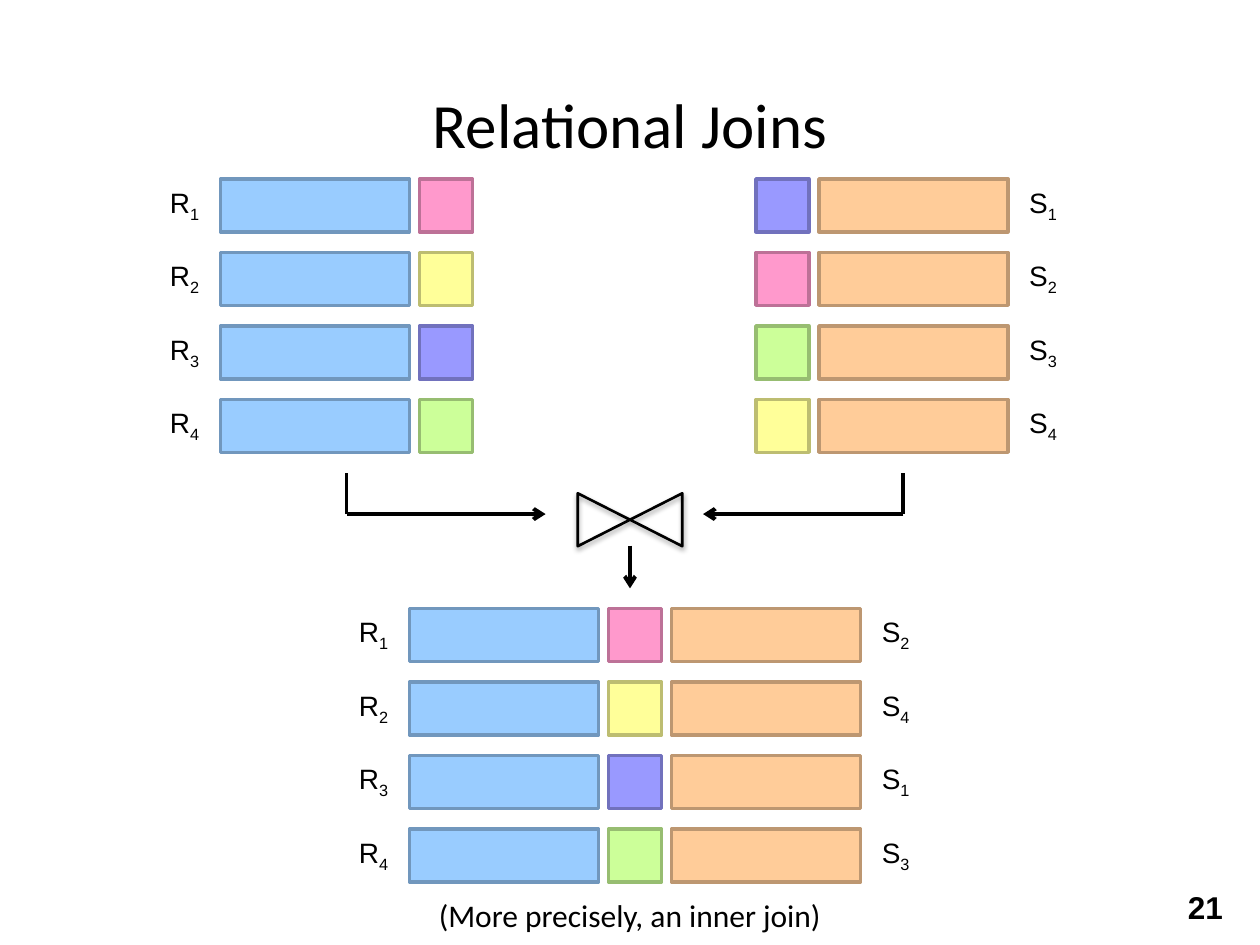
"""Build the relational joins slide: two relations, a join symbol and the joined rows."""
from lxml.etree import SubElement
from pptx import Presentation
from pptx.dml.color import RGBColor
from pptx.enum.shapes import MSO_CONNECTOR, MSO_SHAPE
from pptx.enum.text import MSO_ANCHOR, PP_ALIGN
from pptx.oxml.ns import qn
from pptx.util import Inches, Pt

BLACK = RGBColor(0x00, 0x00, 0x00)
BLUE = RGBColor(0x99, 0xCC, 0xFF)
BLUE_EDGE = RGBColor(0x71, 0x97, 0xBD)
ORANGE = RGBColor(0xFF, 0xCC, 0x99)
ORANGE_EDGE = RGBColor(0xBD, 0x97, 0x71)
PINK = RGBColor(0xFF, 0x99, 0xCC)
PINK_EDGE = RGBColor(0xBD, 0x71, 0x97)
YELLOW = RGBColor(0xFF, 0xFF, 0x99)
YELLOW_EDGE = RGBColor(0xBD, 0xBD, 0x71)
PURPLE = RGBColor(0x99, 0x99, 0xFF)
PURPLE_EDGE = RGBColor(0x71, 0x71, 0xBD)
GREEN = RGBColor(0xCC, 0xFF, 0x99)
GREEN_EDGE = RGBColor(0x97, 0xBD, 0x71)

TITLE = "Relational Joins"
CAPTION = "(More precisely, an inner join)"
SLIDE_NUMBER = "21"
KEYS = {
    "pink": (PINK, PINK_EDGE),
    "yellow": (YELLOW, YELLOW_EDGE),
    "purple": (PURPLE, PURPLE_EDGE),
    "green": (GREEN, GREEN_EDGE),
}
R_KEYS = {"1": "pink", "2": "yellow", "3": "purple", "4": "green"}
S_KEYS = {"1": "purple", "2": "pink", "3": "green", "4": "yellow"}
ARROWS = [
    ((2.75, 4.08), (4.33, 4.08), True),
    ((2.75, 4.08), (2.75, 3.75), False),
    ((7.17, 4.08), (5.58, 4.08), True),
    ((7.17, 4.08), (7.17, 3.75), False),
    ((5, 4.33), (5, 4.67), True),
]

SOURCE_TOP, RESULT_TOP = 1.42, 4.83
ROW_STEP = 7 / 12
BAR_WIDTH, BOX_SIZE, GAP = 1.5, 0.42, 0.08
LABEL_HEIGHT = 0.37


def format_text(run, **values):
    for name, value in {"name": "Arial", "size": Pt(16), **values}.items():
        setattr(run.font, name, value)
    run.font.color.rgb = BLACK


def add_text(slide, box, parts, wrap=True, align=PP_ALIGN.LEFT, **values):
    frame = slide.shapes.add_textbox(*map(Inches, box)).text_frame
    frame.word_wrap = wrap
    paragraph = frame.paragraphs[0]
    paragraph.alignment = align
    for text in parts:
        run = paragraph.add_run()
        run.text = text
        format_text(run, **values)
    return paragraph


def add_label(slide, left, top, width, relation, index):
    box = (left, top, width, LABEL_HEIGHT)
    paragraph = add_text(slide, box, (relation, index), wrap=False)
    paragraph.runs[1]._r.get_or_add_rPr().set("baseline", "-25000")


def add_rectangle(slide, left, top, width, colors):
    box = map(Inches, (left, top, width, BOX_SIZE))
    shape = slide.shapes.add_shape(MSO_SHAPE.RECTANGLE, *box)
    shape.shadow.inherit = False
    shape.fill.solid()
    shape.fill.fore_color.rgb, shape.line.color.rgb = colors
    shape.line.width = Pt(2)


def add_r_bar(slide, left, top, index):
    add_rectangle(slide, left, top, BAR_WIDTH, (BLUE, BLUE_EDGE))
    add_label(slide, left - 0.5, top, 0.45, "R", index)


def add_s_bar(slide, left, top, index):
    add_rectangle(slide, left, top, BAR_WIDTH, (ORANGE, ORANGE_EDGE))
    add_label(slide, left + BAR_WIDTH + 0.07, top, 0.43, "S", index)


def add_key(slide, left, top, key):
    add_rectangle(slide, left, top, BOX_SIZE, KEYS[key])


def add_join_symbol(slide):
    box = map(Inches, (4.79, 3.71, 0.42, 0.83))
    symbol = slide.shapes.add_shape(MSO_SHAPE.FLOWCHART_COLLATE, *box)
    symbol.rotation = 90
    symbol.fill.background()
    symbol.line.color.rgb = BLACK
    symbol.line.width = Pt(1.5)
    symbol.shadow.inherit = False
    effects = symbol._element.spPr.find(qn("a:effectLst"))
    shadow = SubElement(effects, qn("a:outerShdw"), blurRad=str(Pt(3.1)),
                        dist=str(Pt(1.6)), dir="5400000", rotWithShape="0")
    color = SubElement(shadow, qn("a:srgbClr"), val=str(BLACK))
    SubElement(color, qn("a:alpha"), val="38000")


def add_line(slide, start, end, arrow):
    points = map(Inches, (*start, *end))
    connector = slide.shapes.add_connector(MSO_CONNECTOR.STRAIGHT, *points)
    connector.line.color.rgb = BLACK
    connector.line.width = Pt(2.25)
    if arrow:
        SubElement(connector.line._get_or_add_ln(), qn("a:tailEnd"), type="arrow")
    SubElement(connector._element.spPr, qn("a:effectLst"))


def add_rows(slide):
    s_by_key = {key: index for index, key in S_KEYS.items()}
    for row, (index, key) in enumerate(R_KEYS.items()):
        top = SOURCE_TOP + row * ROW_STEP
        add_r_bar(slide, 1.75, top, index)
        add_key(slide, 1.75 + BAR_WIDTH + GAP, top, key)
        add_key(slide, 6, top, S_KEYS[index])
        add_s_bar(slide, 6 + BOX_SIZE + GAP, top, index)

        top = RESULT_TOP + row * ROW_STEP
        key_left = 3.25 + BAR_WIDTH + GAP
        add_r_bar(slide, 3.25, top, index)
        add_key(slide, key_left, top, key)
        add_s_bar(slide, key_left + BOX_SIZE + GAP, top, s_by_key[key])


def add_title(slide):
    title = slide.shapes.title
    box = {"left": 0, "top": 0.6, "width": 10, "height": 0.75}
    for name, value in box.items():
        setattr(title, name, Inches(value))
    title.text_frame.text = TITLE
    title.text_frame.vertical_anchor = MSO_ANCHOR.MIDDLE
    paragraph = title.text_frame.paragraphs[0]
    paragraph.alignment = PP_ALIGN.CENTER
    format_text(paragraph.runs[0], name="Calibri", size=Pt(36))


def main():
    presentation = Presentation()
    presentation.slide_width, presentation.slide_height = Inches(10), Inches(7.5)
    slide = presentation.slides.add_slide(presentation.slide_layouts[5])
    add_title(slide)
    add_join_symbol(slide)
    for start, end, arrow in ARROWS:
        add_line(slide, start, end, arrow)
    add_rows(slide)
    add_text(slide, (0, 7.06, 10, 0.4), [CAPTION], align=PP_ALIGN.CENTER,
             name="Calibri", size=Pt(18))
    add_text(slide, (9.33, 7, 0.58, 0.4), [SLIDE_NUMBER], size=Pt(18), bold=True)
    presentation.save("out.pptx")


if __name__ == "__main__":
    main()
